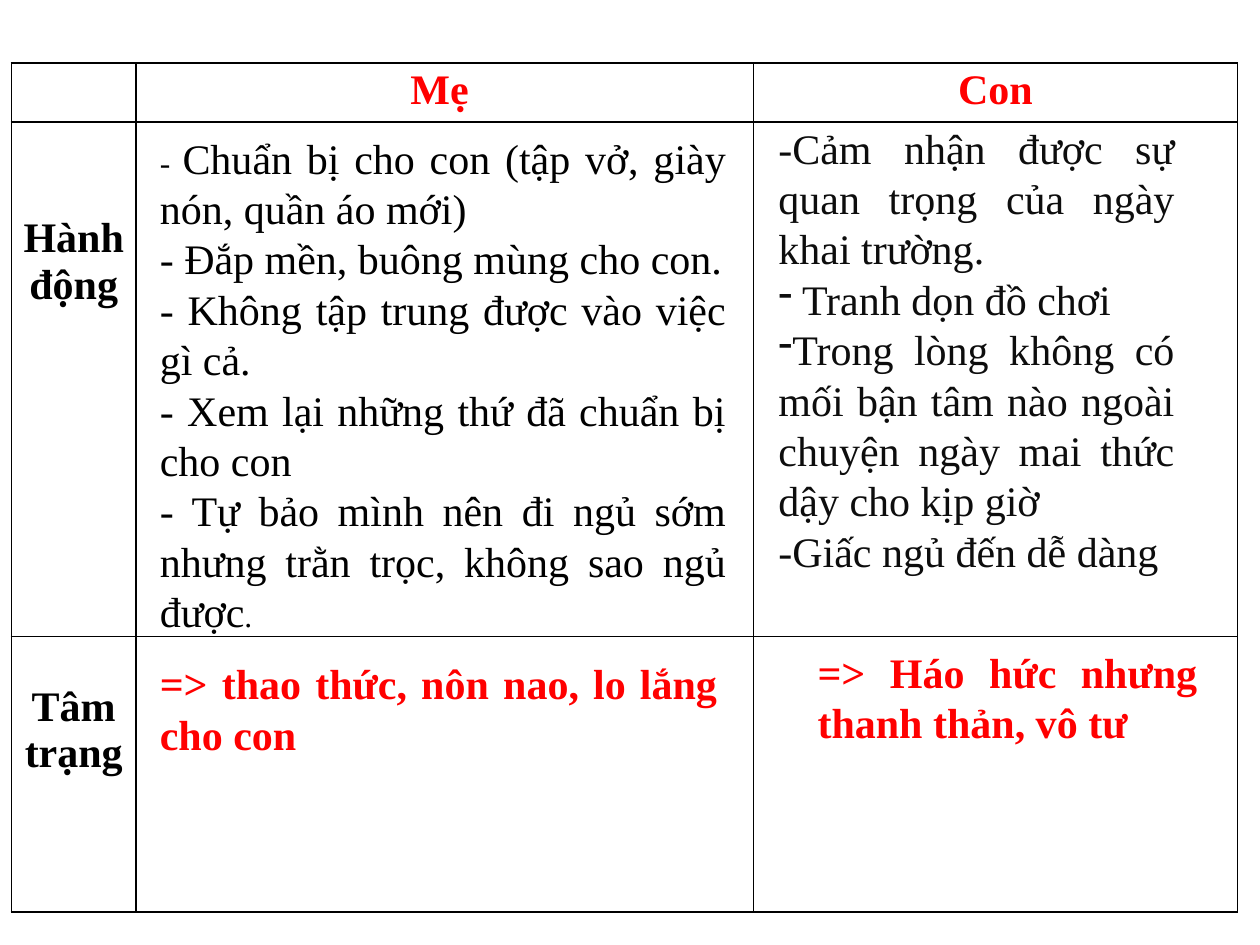
from dataclasses import dataclass

from lxml import etree
from pptx import Presentation
from pptx.dml.color import RGBColor
from pptx.enum import text
from pptx.oxml import ns
from pptx.util import Inches, Pt


@dataclass(frozen=True)
class Theme:
    font: str = "Times New Roman"
    size: float = 24
    small: float = 18
    black: RGBColor = RGBColor(0, 0, 0)
    dark: RGBColor = RGBColor(0x0D, 0x0D, 0x0D)
    red: RGBColor = RGBColor(0xFF, 0, 0)
    border: float = 1


THEME = Theme()


@dataclass(frozen=True)
class Run:
    text: str
    size: float = THEME.size


@dataclass(frozen=True)
class Line:
    runs: tuple[Run, ...]
    bullet: bool = False


@dataclass(frozen=True)
class Note:
    left: float
    top: float
    width: float
    height: float
    color: RGBColor
    lines: tuple[Line, ...]
    bold: bool = False


@dataclass(frozen=True)
class Heading:
    row: int
    column: int
    text: str
    color: RGBColor
    space_above: float = 0.03


COLUMN_WIDTHS = (0.99, 4.9, 3.84)
ROW_HEIGHTS = (0.47, 4.08, 2.19)

HEADINGS = (
    Heading(0, 1, "Mẹ ", THEME.red),
    Heading(0, 2, "Con", THEME.red),
    Heading(1, 0, "Hành động", THEME.black, 0.74),
    Heading(2, 0, "Tâm trạng", THEME.black, 0.38),
)


def line(content: str, bullet: bool = False) -> Line:
    return Line((Run(content),), bullet)


NOTES = (
    Note(1.17, 1, 4.69, 4.14, THEME.black, (
        Line((Run("- ", THEME.small),
              Run("Chuẩn bị cho con (tập vở, giày nón, quần áo mới)"))),
        line("- Đắp mền, buông mùng cho con."),
        line("- Không tập trung được vào việc gì cả."),
        line("- Xem lại những thứ đã chuẩn bị cho con"),
        Line((Run("- Tự bảo mình nên đi ngủ sớm nhưng trằn trọc, không sao ngủ được"),
              Run(". ", THEME.small))),
    )),
    Note(6.08, 0.92, 3.34, 3.73, THEME.dark, (
        line("-Cảm nhận được sự quan trọng của ngày khai trường."),
        line(" Tranh dọn đồ chơi", bullet=True),
        line("Trong lòng không có mối bận tâm nào ngoài chuyện ngày mai "
             "thức dậy cho kịp giờ", bullet=True),
        line("-Giấc ngủ đến dễ dàng"),
    )),
    Note(1.17, 5.17, 4.62, 1.31, THEME.red,
         (line("=> thao thức, nôn nao, lo lắng cho con "),), bold=True),
    Note(6.39, 5.08, 3.21, 1.31, THEME.red,
         (line("=> Háo hức nhưng thanh thản, vô tư"),), bold=True),
)


def format_run(run, size: float, color: RGBColor, bold: bool) -> None:
    run.font.name = THEME.font
    run.font.size = Pt(size)
    run.font.color.rgb = color
    run.font.bold = bold


def add_dash_bullet(paragraph) -> None:
    properties = paragraph._p.get_or_add_pPr()
    properties.set("marL", "0")
    properties.set("indent", "0")
    etree.SubElement(properties, ns.qn("a:buFontTx"))
    etree.SubElement(properties, ns.qn("a:buChar"), char="-")


def set_borders(cell) -> None:
    properties = cell._tc.get_or_add_tcPr()
    for index, side in enumerate(("a:lnL", "a:lnR", "a:lnT", "a:lnB")):
        border = etree.Element(ns.qn(side), w=str(Pt(THEME.border)))
        fill = etree.SubElement(border, ns.qn("a:solidFill"))
        etree.SubElement(fill, ns.qn("a:srgbClr"), val=str(THEME.black))
        properties.insert(index, border)


def add_comparison_table(slide) -> None:
    frame = slide.shapes.add_table(
        len(ROW_HEIGHTS), len(COLUMN_WIDTHS), Inches(0.09), Inches(0.5),
        Inches(sum(COLUMN_WIDTHS)), Inches(sum(ROW_HEIGHTS)))
    table = frame.table
    table.first_row = table.horz_banding = False
    for column, width in zip(table.columns, COLUMN_WIDTHS):
        column.width = Inches(width)
    for row, height in zip(table.rows, ROW_HEIGHTS):
        row.height = Inches(height)
    for cell in table.iter_cells():
        cell.fill.background()
        set_borders(cell)
    for heading in HEADINGS:
        fill_heading(table.cell(heading.row, heading.column), heading)


def fill_heading(cell, heading: Heading) -> None:
    cell.margin_left = cell.margin_right = Inches(0.05)
    cell.margin_top = Inches(heading.space_above)
    cell.margin_bottom = Inches(0.03)
    cell.text_frame.text = heading.text
    paragraph = cell.text_frame.paragraphs[0]
    paragraph.alignment = text.PP_ALIGN.CENTER
    format_run(paragraph.runs[0], THEME.size, heading.color, True)


def add_note(slide, note: Note) -> None:
    box = slide.shapes.add_textbox(Inches(note.left), Inches(note.top),
                                   Inches(note.width), Inches(note.height))
    frame = box.text_frame
    frame.word_wrap = True
    for index, content in enumerate(note.lines):
        paragraph = frame.add_paragraph() if index else frame.paragraphs[0]
        paragraph.alignment = text.PP_ALIGN.JUSTIFY
        if content.bullet:
            add_dash_bullet(paragraph)
        for part in content.runs:
            run = paragraph.add_run()
            run.text = part.text
            format_run(run, part.size, note.color, note.bold)


def main() -> None:
    presentation = Presentation()
    presentation.slide_width = Inches(10)
    presentation.slide_height = Inches(7.5)
    slide = presentation.slides.add_slide(presentation.slide_layouts[6])
    add_comparison_table(slide)
    for note in NOTES:
        add_note(slide, note)
    presentation.save("out.pptx")


if __name__ == "__main__":
    main()
